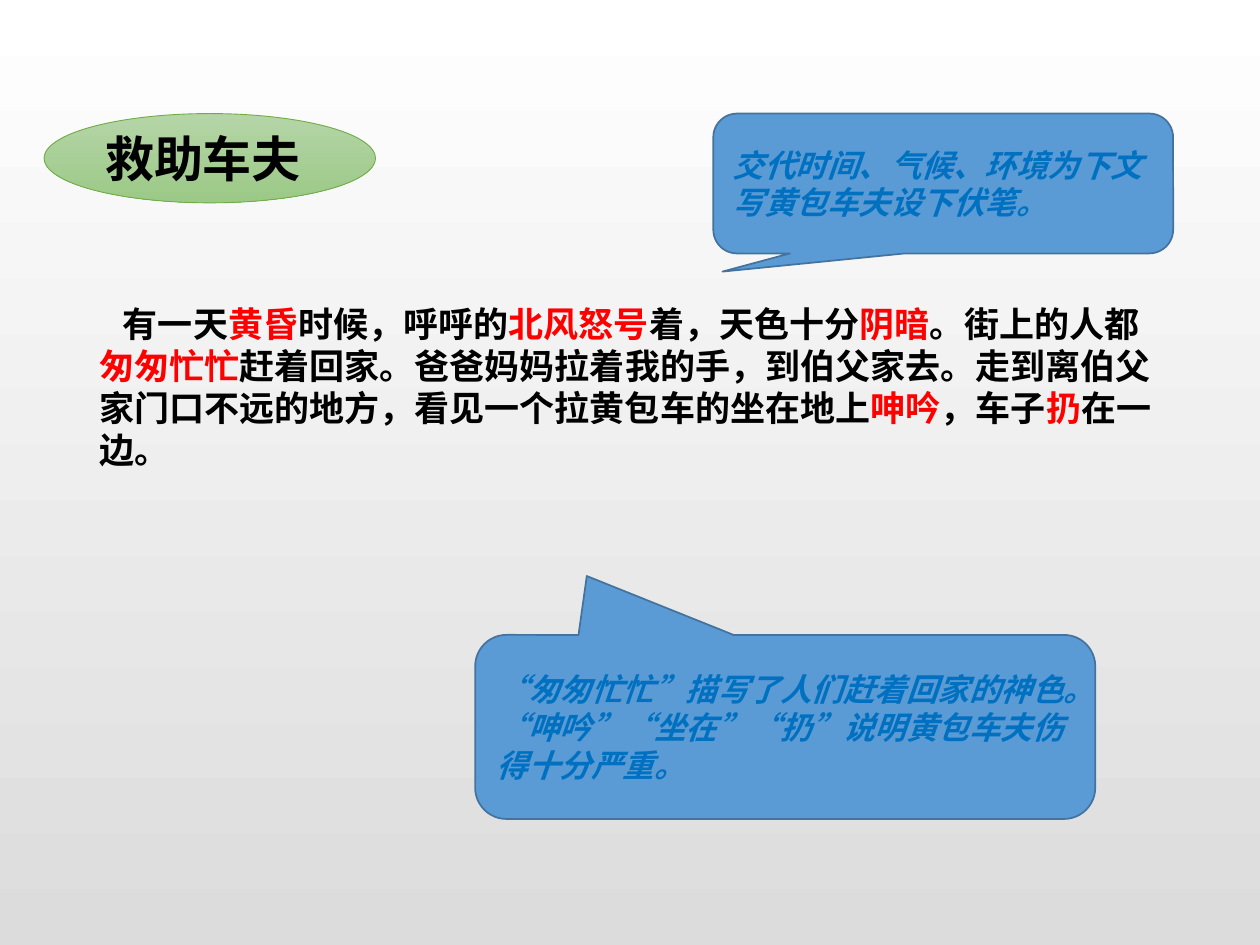
"""Build the reading-notes slide on helping the rickshaw puller."""
from pptx import Presentation
from pptx.dml.color import RGBColor as RGB
from pptx.enum.shapes import MSO_SHAPE as Shape
from pptx.enum.text import MSO_ANCHOR as Anchor, MSO_AUTO_SIZE as Fit, PP_ALIGN as Align
from pptx.oxml.ns import qn
from pptx.util import Cm, Pt
from lxml.etree import SubElement

THEME = {
    "font": "Noto Sans CJK SC", "leading": 1.2,
    "title": 28, "body": 20, "note": 18,
    "ink": "000000", "key": "FF0000", "note_ink": "0070C0",
    "note_fill": "5B9BD5", "note_line": "43739E",
    "oval": ("B5D5A7", "9CC987"), "oval_line": "70AD47",
    "back": ("FFFFFF", "DCDCDC"),
}

TITLE = "救助车夫"
TITLE_BOX = (0.89, 2.29, 6.68, 1.8)
BODY_BOX = (1.75, 5.97, 21.87, 3.68)
BODY_INDENT = 0.48
BODY = [
    ("有一天", "ink"), ("黄昏", "key"), ("时候，呼呼的", "ink"),
    ("北风怒号", "key"), ("着，天色十分", "ink"), ("阴暗", "key"),
    ("。街上的人都", "ink"), ("匆匆忙忙", "key"),
    ("赶着回家。爸爸妈妈拉着我的手，到伯父家去。"
     "走到离伯父家门口不远的地方，看见一个拉黄包车的坐在地上", "ink"),
    ("呻吟", "key"), ("，车子", "ink"), ("扔", "key"), ("在一边。", "ink"),
]
NOTES = [
    ("交代时间、气候、环境为下文写黄包车夫设下伏笔。",
     (14.38, 2.29, 9.27, 2.82), (-0.48, 0.63, 0.17)),
    ("“匆匆忙忙”描写了人们赶着回家的神色。“呻吟”“坐在”“扔”说明黄包车夫伤得十分严重。",
     (9.58, 12.8, 12.5, 3.71), (-0.32, -0.82, 0.17)),
]


def place(box):
    return [Cm(v) for v in box]


def shade(fill, colors):
    fill.gradient()
    fill.gradient_angle = 270
    for stop, color in zip(fill.gradient_stops, colors):
        stop.color.rgb = RGB.from_string(color)


def outline(sp, color, width):
    sp.shadow.inherit = False
    sp.line.color.rgb = RGB.from_string(color)
    sp.line.width = Pt(width)


def write(p, runs, size, italic=False):
    p.alignment = Align.LEFT
    p.line_spacing = Pt(THEME[size] * THEME["leading"])
    for text, color in runs:
        r = p.add_run()
        r.text = text
        font = r.font
        font.size, font.bold, font.italic = Pt(THEME[size]), True, italic
        font.color.rgb = RGB.from_string(THEME[color])
        font.name = THEME["font"]
        SubElement(r._r.get_or_add_rPr(), qn("a:ea"), typeface=THEME["font"])


def add_title(s):
    oval = s.shapes.add_shape(Shape.OVAL, *place(TITLE_BOX))
    shade(oval.fill, THEME["oval"])
    outline(oval, THEME["oval_line"], 0.5)
    sp = s.shapes.title
    oval._element.addnext(sp._element)
    sp.left, sp.top, sp.width, sp.height = place(TITLE_BOX)
    tf = sp.text_frame
    tf.auto_size, tf.vertical_anchor = Fit.NONE, Anchor.MIDDLE
    tf.margin_left = Cm(1.23)
    write(tf.paragraphs[0], [(TITLE, "ink")], "title")


def add_body(s):
    tf = s.shapes.add_textbox(*place(BODY_BOX)).text_frame
    tf.word_wrap, tf.auto_size = True, Fit.SHAPE_TO_FIT_TEXT
    p = tf.paragraphs[0]
    p._p.get_or_add_pPr().set("indent", str(Cm(BODY_INDENT)))
    write(p, BODY, "body")


def add_note(s, text, box, adjustments):
    sp = s.shapes.add_shape(Shape.ROUNDED_RECTANGULAR_CALLOUT, *place(box))
    for i, value in enumerate(adjustments):
        sp.adjustments[i] = value
    sp.fill.solid()
    sp.fill.fore_color.rgb = RGB.from_string(THEME["note_fill"])
    outline(sp, THEME["note_line"], 1)
    tf = sp.text_frame
    tf.word_wrap, tf.vertical_anchor = True, Anchor.MIDDLE
    write(tf.paragraphs[0], [(text, "note_ink")], "note", italic=True)


def main():
    prs = Presentation()
    prs.slide_width, prs.slide_height = Cm(25.4), Cm(19.05)
    s = prs.slides.add_slide(prs.slide_layouts[5])
    shade(s.background.fill, THEME["back"])
    add_title(s)
    add_body(s)
    for note in NOTES:
        add_note(s, *note)
    prs.save("out.pptx")


if __name__ == "__main__":
    main()
